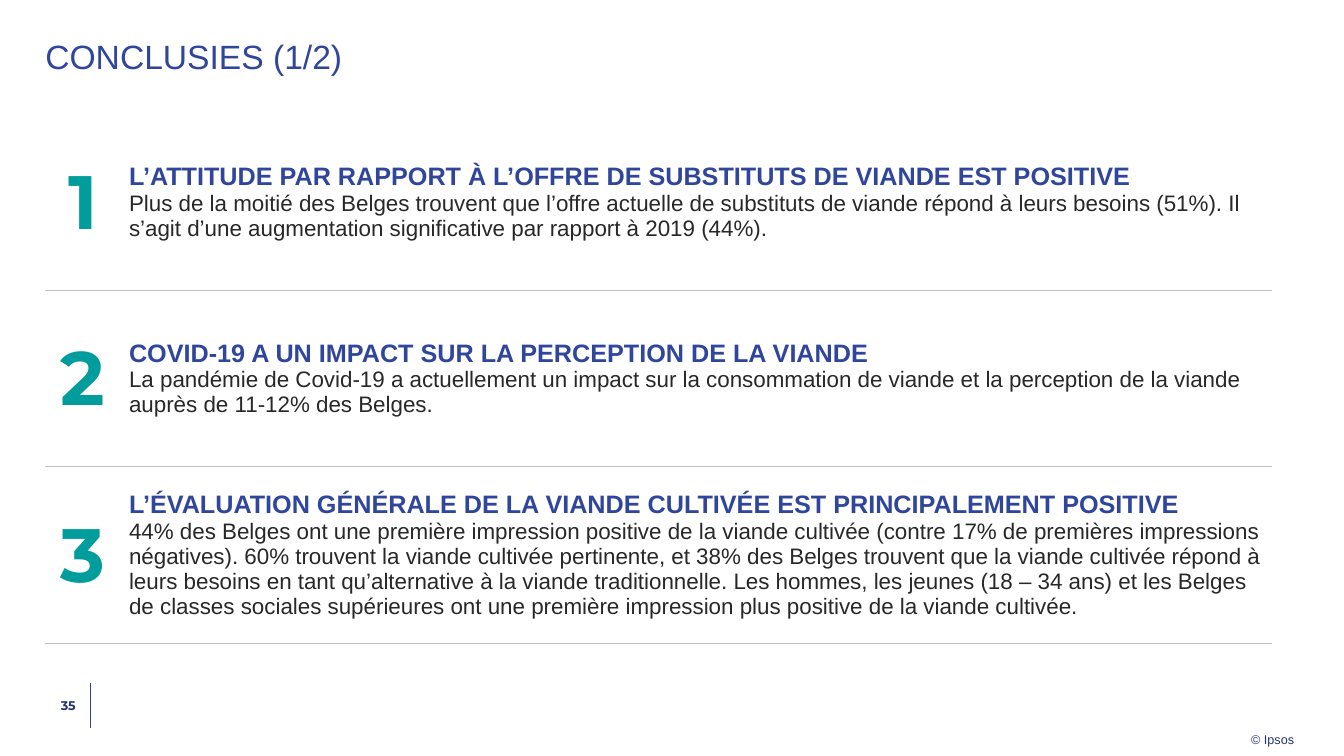
import lxml.etree
import pptx
import pptx.dml.color
import pptx.enum.shapes
import pptx.enum.text
import pptx.oxml.ns
import pptx.util

Inches = pptx.util.Inches
Pt = pptx.util.Pt
ALIGN = pptx.enum.text.PP_ALIGN
ANCHOR = pptx.enum.text.MSO_ANCHOR
qn = pptx.oxml.ns.qn

COLORS = {
    "blue": "2F469C",
    "navy": "233475",
    "teal": "009D9C",
    "text": "282828",
    "rule": "BFBFBF",
}

CONCLUSIONS = [
    ("L’ATTITUDE PAR RAPPORT À L’OFFRE DE SUBSTITUTS DE VIANDE EST POSITIVE",
     "Plus de la moitié des Belges trouvent que l’offre actuelle de substituts de viande "
     "répond à leurs besoins (51%). Il s’agit d’une augmentation significative par rapport "
     "à 2019 (44%)."),
    ("COVID-19 A UN IMPACT SUR LA PERCEPTION DE LA VIANDE",
     "La pandémie de Covid-19 a actuellement un impact sur la consommation de viande et la "
     "perception de la viande auprès de 11-12% des Belges."),
    ("L’ÉVALUATION GÉNÉRALE DE LA VIANDE CULTIVÉE EST PRINCIPALEMENT POSITIVE",
     "44% des Belges ont une première impression positive de la viande cultivée (contre 17% "
     "de premières impressions négatives). 60% trouvent la viande cultivée pertinente, et 38% "
     "des Belges trouvent que la viande cultivée répond à leurs besoins en tant "
     "qu’alternative à la viande traditionnelle. Les hommes, les jeunes (18 – 34 ans) et les "
     "Belges de classes sociales supérieures ont une première impression plus positive de la "
     "viande cultivée."),
]


class PageBuilder:
    body_font = "Arial"
    number_font = "Montserrat"

    def __init__(self, page):
        self.page = page

    def color(self, name):
        return pptx.dml.color.RGBColor.from_string(COLORS[name])

    def add_span(self, para, text, size, color, bold=False, font=body_font, align=ALIGN.LEFT):
        para.alignment = align
        span = para.add_run()
        span.text = text
        span.font.name = font
        span.font.size = Pt(size)
        span.font.bold = bold
        span.font.color.rgb = self.color(color)

    def text(self, place, text, size, color, insets=(0, 0, 0, 0), wrap=True,
             anchor=ANCHOR.TOP, spacing=1.0, **style):
        box = self.page.shapes.add_textbox(*map(Inches, place))
        frame = box.text_frame
        frame.word_wrap = wrap
        frame.vertical_anchor = anchor
        self.set_margins(frame, insets)
        frame.paragraphs[0].line_spacing = spacing
        self.add_span(frame.paragraphs[0], text, size, color, **style)

    def set_margins(self, holder, insets):
        """Insets run left, top, right, bottom."""
        (holder.margin_left, holder.margin_top,
         holder.margin_right, holder.margin_bottom) = map(Inches, insets)

    def line(self, start, end, color, width):
        line = self.page.shapes.add_connector(
            pptx.enum.shapes.MSO_CONNECTOR.STRAIGHT, *map(Inches, start + end))
        line.line.color.rgb = self.color(color)
        line.line.width = Pt(width)
        lxml.etree.SubElement(line._element.spPr, qn("a:effectLst"))

    def style_cell(self, cell, insets, ruled_sides):
        cell.vertical_anchor = ANCHOR.MIDDLE
        self.set_margins(cell, insets)
        cell.fill.background()
        properties = cell._tc.get_or_add_tcPr()
        for index, side in enumerate("LRTB"):
            border = lxml.etree.Element(qn(f"a:ln{side}"), w=str(Pt(0.5)))
            if side in ruled_sides:
                fill = lxml.etree.SubElement(border, qn("a:solidFill"))
                lxml.etree.SubElement(fill, qn("a:srgbClr"), val=COLORS["rule"])
            else:
                lxml.etree.SubElement(border, qn("a:noFill"))
            properties.insert(index, border)

    def numbered_table(self, left, top, widths, row_height, entries):
        table = self.page.shapes.add_table(
            len(entries), len(widths), Inches(left), Inches(top),
            Inches(sum(widths)), Inches(row_height * len(entries))).table
        table.first_row = table.horz_banding = False
        for column, width in zip(table.columns, widths):
            column.width = Inches(width)
        for index, (heading, detail) in enumerate(entries):
            table.rows[index].height = Inches(row_height)
            number, content = table.rows[index].cells
            ruled_sides = "TB" if index else "B"
            self.style_cell(number, (0, 0, 0, 0), ruled_sides)
            self.style_cell(content, (0.08, 0.04, 0.08, 0.04), ruled_sides)
            self.add_span(number.text_frame.paragraphs[0], str(index + 1), 54, "teal",
                          bold=True, font=self.number_font, align=ALIGN.CENTER)
            self.add_span(content.text_frame.paragraphs[0], heading, 18, "blue", bold=True)
            self.add_span(content.text_frame.add_paragraph(), detail, 16, "text")


def main():
    deck = pptx.Presentation()
    deck.slide_width, deck.slide_height = Inches(13.33), Inches(7.5)
    builder = PageBuilder(deck.slides.add_slide(deck.slide_layouts[6]))

    builder.text((12.41, 7.22, 0.43, 0.19), "© Ipsos", 9, "navy",
                 insets=(0, 0.04, 0, 0), wrap=False)
    builder.line((0.9, 6.78), (0.9, 7.22), "blue", 0.5)
    builder.text((0.45, 0.4, 12.44, 0.36), "CONCLUSIES (1/2)", 24, "blue", spacing=0.9)
    builder.numbered_table(0.45, 1.13, (0.75, 11.42), 1.75, CONCLUSIONS)
    builder.text((0.45, 6.78, 0.45, 0.43), "35", 9, "navy", insets=(0, 0, 0.15, 0),
                 anchor=ANCHOR.MIDDLE, bold=True, font=builder.number_font,
                 align=ALIGN.RIGHT)
    deck.save("out.pptx")


if __name__ == "__main__":
    main()
